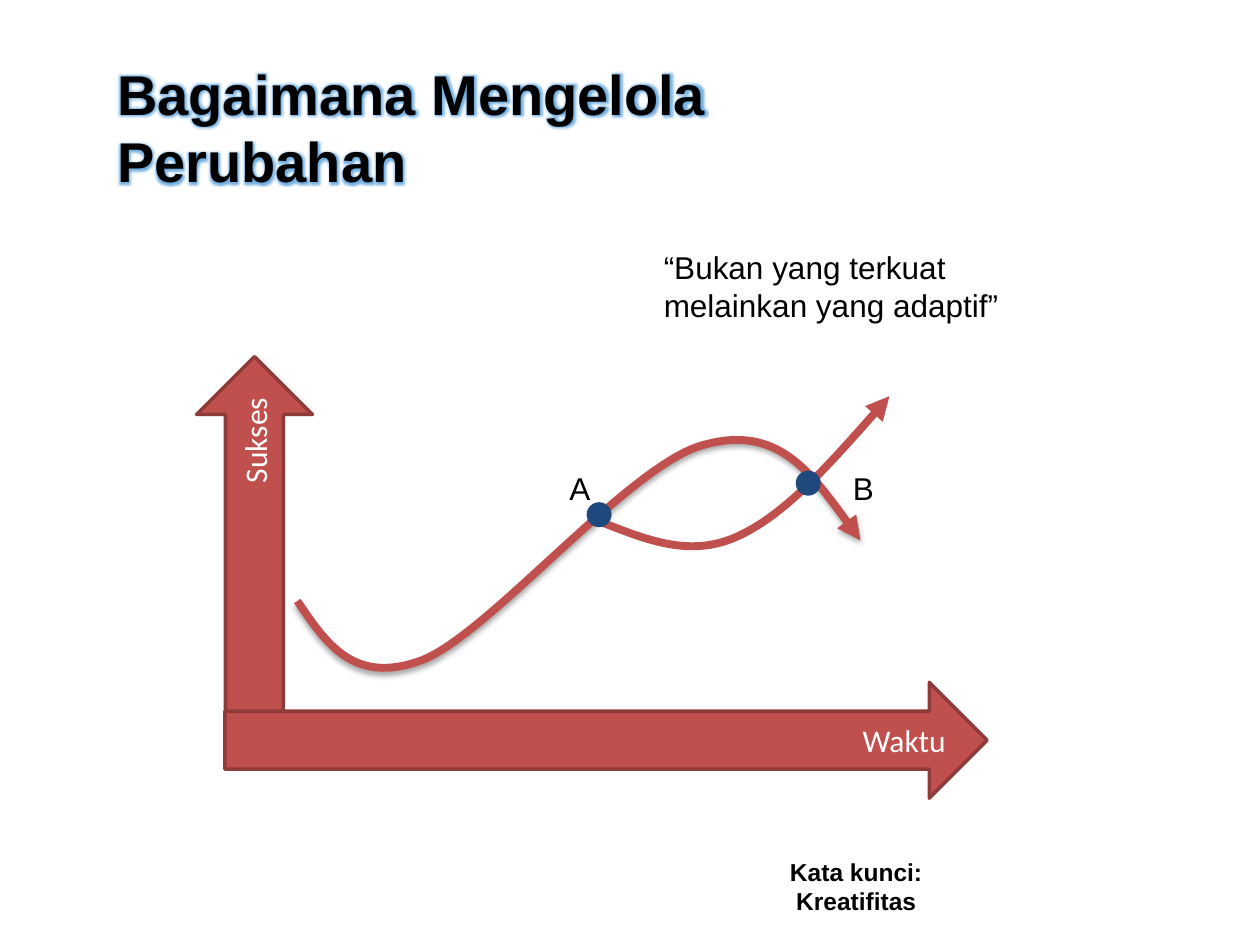
from lxml.etree import SubElement
from pptx import Presentation
from pptx.dml.color import RGBColor
from pptx.enum.shapes import MSO_SHAPE
from pptx.enum.text import MSO_ANCHOR, MSO_AUTO_SIZE, PP_ALIGN
from pptx.oxml import parse_xml
from pptx.oxml.ns import qn
from pptx.util import Inches, Pt

NS = 'xmlns:a="http://schemas.openxmlformats.org/drawingml/2006/main"'
RED, EDGE, NAVY = "C0504D", "8E3B39", "1F497D"
DECLINE = [(0.8, 1.94), (1.03, 2.28), (1.25, 2.61), (1.79, 2.41), (2.33, 2.2),
           (3.44, 0.85), (4.03, 0.7), (4.61, 0.54), (4.94, 1), (5.27, 1.46)]
RENEWAL = [(3.17, 1.11), (3.49, 1.3), (3.81, 1.51), (4.21, 1.41),
           (4.61, 1.31), (5.11, 0.91), (5.6, 0.51)]


def color(hex):
    return RGBColor.from_string(hex)


def place(shape, left, top, width, height):
    shape.left, shape.top = Inches(left), Inches(top)
    shape.width, shape.height = Inches(width), Inches(height)


def write(shape, text, size=18, font="Arial", ink="000000", bold=False,
          align=PP_ALIGN.LEFT, anchor=MSO_ANCHOR.TOP, wrap=True, grow=True):
    frame = shape.text_frame
    frame.word_wrap, frame.vertical_anchor = wrap, anchor
    frame.auto_size = MSO_AUTO_SIZE.SHAPE_TO_FIT_TEXT if grow else MSO_AUTO_SIZE.NONE
    para = frame.paragraphs[0]
    para.alignment = align
    run = para.add_run()
    run.text = text
    run.font.size, run.font.name, run.font.bold = Pt(size), font, bold
    run.font.color.rgb = color(ink)
    return run


def paint(shape, fill, line):
    shape.shadow.inherit = False
    shape.fill.solid()
    shape.fill.fore_color.rgb = color(fill)
    shape.line.color.rgb = color(line)
    shape.line.width = Pt(2)


def label(slide, box, text, **style):
    write(slide.shapes.add_textbox(*map(Inches, box)), text, **style)


def title(slide, box):
    shape = slide.shapes.title
    place(shape, *box)
    run = write(shape, "Bagaimana Mengelola Perubahan", size=32, bold=True)
    props = run.font.fill._xPr
    props.insert(0, parse_xml(
        f'<a:ln {NS} w="12700"><a:solidFill><a:srgbClr val="002060"/>'
        '</a:solidFill></a:ln>'))
    props.find(qn("a:solidFill")).addnext(parse_xml(
        f'<a:effectLst {NS}><a:glow rad="50800"><a:srgbClr val="4F9BD9">'
        '<a:alpha val="80000"/></a:srgbClr></a:glow></a:effectLst>'))


def axis(slide, box, text, turn=0):
    shape = slide.shapes.add_shape(MSO_SHAPE.UP_ARROW, *map(Inches, box))
    shape.rotation = turn
    paint(shape, RED, EDGE)
    write(shape, text, font="Calibri", ink="FFFFFF", align=PP_ALIGN.RIGHT,
          anchor=MSO_ANCHOR.MIDDLE, grow=False)
    shape.text_frame._txBody.bodyPr.set("vert", "vert270")


def curve(slide, left, top, points, turn=0, shade=False):
    """Draw a cubic Bezier arrow; after the start, points come in threes."""
    spots = [(Inches(left + x), Inches(top + y)) for x, y in points]
    draft = slide.shapes.build_freeform(*spots[0])
    draft.add_line_segments(spots[1:], close=False)
    shape = draft.convert_to_shape()
    shape.rotation = turn
    shape.fill.background()
    shape.line.color.rgb = color(RED)
    shape.line.width = Pt(4.5)
    shape.shadow.inherit = False
    props = shape._element.spPr
    route = next(props.iter(qn("a:path")))
    steps = route.findall(qn("a:lnTo"))
    for i in range(0, len(steps), 3):
        bend = SubElement(route, qn("a:cubicBezTo"))
        for step in steps[i:i + 3]:
            bend.append(step[0])
            route.remove(step)
    SubElement(props.find(qn("a:ln")), qn("a:tailEnd"), type="triangle")
    if shade:
        props.find(qn("a:effectLst")).append(parse_xml(
            f'<a:outerShdw {NS} blurRad="39370" dist="22860" dir="5400000" '
            'rotWithShape="0"><a:srgbClr val="000000"><a:alpha val="35000"/>'
            '</a:srgbClr></a:outerShdw>'))


def dot(slide, left, top):
    size = Inches(0.17)
    shape = slide.shapes.add_shape(
        MSO_SHAPE.OVAL, Inches(left), Inches(top), size, size)
    paint(shape, NAVY, NAVY)


def graph(slide, left, top):
    axis(slide, (left, top, 0.92, 3.17), "Sukses")
    axis(slide, (left + 2.79, top + 0.02, 0.92, 6.05), "Waktu", turn=90)
    curve(slide, left, top, DECLINE, shade=True)
    curve(slide, left, top, RENEWAL, turn=350.4)
    dot(slide, left + 3.11, top + 1.17)
    dot(slide, left + 4.77, top + 0.92)
    label(slide, (left + 2.86, top + 0.84, 0.33, 0.4), "A")
    label(slide, (left + 5.11, top + 0.84, 0.37, 0.4), "B", wrap=False)


def main():
    deck = Presentation()
    deck.slide_width, deck.slide_height = Inches(10), Inches(7.5)
    slide = deck.slides.add_slide(deck.slide_layouts[5])
    title(slide, (0.83, 0.42, 6.08, 1.18))
    graph(slide, 1.56, 2.83)
    label(slide, (5.17, 1.92, 3.33, 0.71),
          "“Bukan yang terkuat melainkan yang adaptif”")
    label(slide, (5.67, 6.75, 2.25, 0.34), "Kata kunci: Kreatifitas",
          size=14, bold=True, align=PP_ALIGN.CENTER)
    deck.save("out.pptx")


if __name__ == "__main__":
    main()
